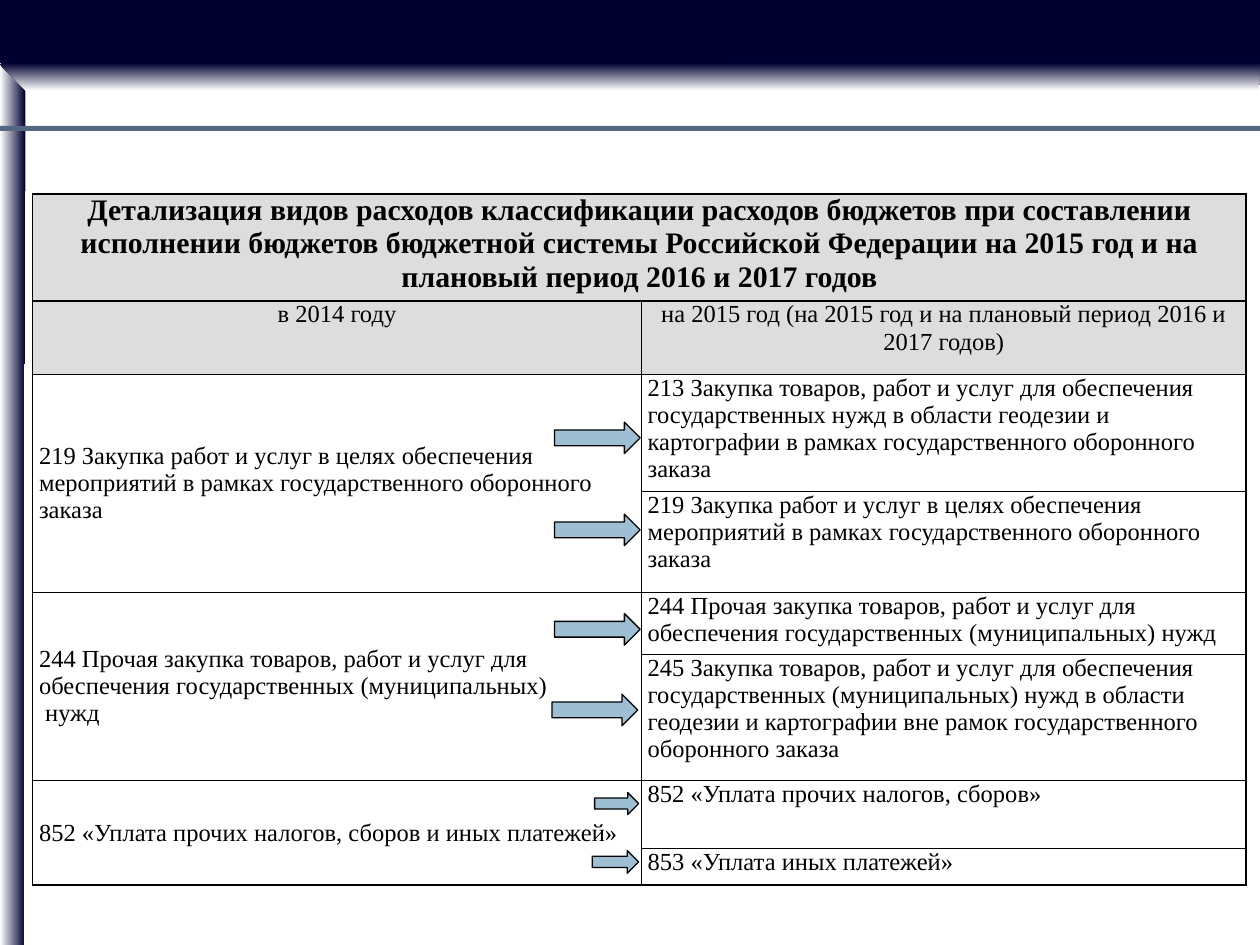
from lxml.etree import SubElement
from pptx import Presentation
from pptx.dml.color import RGBColor
from pptx.enum.shapes import MSO_SHAPE
from pptx.enum.text import MSO_ANCHOR, PP_ALIGN
from pptx.oxml.ns import qn
from pptx.util import Pt

NAVY = RGBColor(0x00, 0x00, 0x30)
SLATE = RGBColor(0x54, 0x66, 0x82)
SKY = RGBColor(0x9D, 0xBE, 0xD3)
GREY = RGBColor(0xDD, 0xDD, 0xDD)
WHITE = RGBColor(0xFF, 0xFF, 0xFF)
BLACK = RGBColor(0x00, 0x00, 0x00)
FONT = "Times New Roman"

HEADING = ("Детализация видов расходов классификации расходов бюджетов при составлении "
           "исполнении бюджетов бюджетной системы Российской Федерации на 2015 год и на "
           "плановый период 2016 и 2017 годов")
YEARS = ["в 2014 году", "на 2015 год (на 2015 год и на плановый период 2016 и 2017 годов)"]
DEFENCE_WORKS = ("219 Закупка работ и услуг в целях обеспечения мероприятий в рамках "
                 "государственного оборонного заказа")
OTHER_PURCHASES = ("244 Прочая закупка товаров, работ и услуг для обеспечения "
                   "государственных (муниципальных)")
# Each 2014 code (as paragraphs) is split into two codes for 2015
SPLITS = [
    ([DEFENCE_WORKS],
     ["213 Закупка товаров, работ и услуг для обеспечения государственных нужд в области "
      "геодезии и картографии в рамках государственного оборонного заказа",
      DEFENCE_WORKS]),
    ([OTHER_PURCHASES, "нужд"],
     [OTHER_PURCHASES + " нужд",
      "245 Закупка товаров, работ и услуг для обеспечения государственных (муниципальных) "
      "нужд в области геодезии и картографии вне рамок государственного оборонного заказа"]),
    (["852 «Уплата прочих налогов, сборов и иных платежей»"],
     ["852 «Уплата прочих налогов, сборов»", "853 «Уплата иных платежей»"]),
]
COLUMNS = [347.8, 345.6]
ROWS = [61.2, 41.8, 67, 57.6, 35.6, 72, 38.9, 20.9]
ARROWS = [
    (316.8, 241.2, 49, 18), (316.8, 293.8, 49, 18), (316.8, 350.6, 49, 18),
    (338.4, 486, 26.6, 13), (339.8, 452.9, 25.2, 12.6), (315.4, 396.7, 49, 18),
]


class SlideBuilder:
    def __init__(self, page):
        self.page = page

    def shape(self, kind, left, top, width, height, fill, line=None):
        shape = self.page.shapes.add_shape(kind, Pt(left), Pt(top), Pt(width), Pt(height))
        shape.shadow.inherit = False
        shape.fill.solid()
        shape.fill.fore_color.rgb = fill
        if line is None:
            shape.line.fill.background()
        else:
            shape.line.color.rgb = line
            shape.line.width = Pt(0.75)

    def gradient_outline(self, points, colours, angle):
        start, *others = [(Pt(x), Pt(y)) for x, y in points]
        outline = self.page.shapes.build_freeform(*start)
        outline.add_line_segments(others, close=True)
        shape = outline.convert_to_shape()
        shape.shadow.inherit = False
        shape.line.fill.background()
        shape.fill.gradient()
        shape.fill.gradient_angle = angle
        for stop, colour in zip(shape.fill.gradient_stops, colours):
            stop.color.rgb = colour

    def table(self, left, top, columns, rows):
        frame = self.page.shapes.add_table(len(rows), len(columns), Pt(left), Pt(top),
                                           Pt(sum(columns)), Pt(sum(rows)))
        table = frame.table
        table.first_row = table.horz_banding = False
        for column, width in zip(table.columns, columns):
            column.width = Pt(width)
        for row, height in zip(table.rows, rows):
            row.height = Pt(height)
        for cell in table.iter_cells():
            self.border(cell)
            cell.fill.background()
        return table

    def border(self, cell):
        properties = cell._tc.get_or_add_tcPr()
        for side in ("a:lnL", "a:lnR", "a:lnT", "a:lnB"):
            line = SubElement(properties, qn(side), w=str(Pt(1)))
            fill = SubElement(line, qn("a:solidFill"))
            SubElement(fill, qn("a:srgbClr"), val=str(BLACK))

    def cell(self, cell, texts, size=14, bold=False, align=PP_ALIGN.LEFT,
             anchor=MSO_ANCHOR.TOP, fill=None):
        cell.margin_left = cell.margin_right = Pt(3.6)
        cell.margin_top = cell.margin_bottom = 0
        cell.vertical_anchor = anchor
        if fill is not None:
            cell.fill.solid()
            cell.fill.fore_color.rgb = fill
        for index, text in enumerate(texts):
            frame = cell.text_frame
            para = frame.add_paragraph() if index else frame.paragraphs[0]
            para.alignment = align
            if index:  # continuation lines sit slightly inwards
                para._p.get_or_add_pPr().set("marL", str(Pt(3.5)))
            span = para.add_run()
            span.text = text
            span.font.name = FONT
            span.font.size = Pt(size)
            span.font.bold = bold
            span.font.color.rgb = BLACK


def main():
    deck = Presentation()
    deck.slide_width, deck.slide_height = Pt(720), Pt(540)
    page = deck.slides.add_slide(deck.slide_layouts[6])
    builder = SlideBuilder(page)

    # Top band, shaded edges and rule
    builder.shape(MSO_SHAPE.RECTANGLE, 0, 0, 720, 36, NAVY, NAVY)
    builder.gradient_outline([(0, 540), (0, 36), (14.4, 50.4), (13.7, 540)], (WHITE, NAVY), 0)
    builder.gradient_outline([(720, 36), (0, 36.7), (15, 51.8), (719.3, 51.8)],
                             (NAVY, WHITE), 270)
    builder.shape(MSO_SHAPE.RECTANGLE, 0, 72, 720, 2.9, SLATE)

    # Table heading
    table = builder.table(18.7, 110.9, COLUMNS, ROWS)
    table.cell(0, 0).merge(table.cell(0, 1))
    builder.cell(table.cell(0, 0), [HEADING], size=17, bold=True,
                 align=PP_ALIGN.CENTER, fill=GREY)
    for column, text in enumerate(YEARS):
        builder.cell(table.cell(1, column), [text], align=PP_ALIGN.CENTER, fill=GREY)

    # Expense codes
    for index, (before, after) in enumerate(SPLITS):
        first = 2 + 2 * index
        table.cell(first, 0).merge(table.cell(first + 1, 0))
        builder.cell(table.cell(first, 0), before, anchor=MSO_ANCHOR.MIDDLE)
        for offset, text in enumerate(after):
            builder.cell(table.cell(first + offset, 1), [text])

    # Arrows from the old codes to the new ones
    for arrow in ARROWS:
        builder.shape(MSO_SHAPE.RIGHT_ARROW, *arrow, SKY, BLACK)

    deck.save("out.pptx")


if __name__ == "__main__":
    main()
